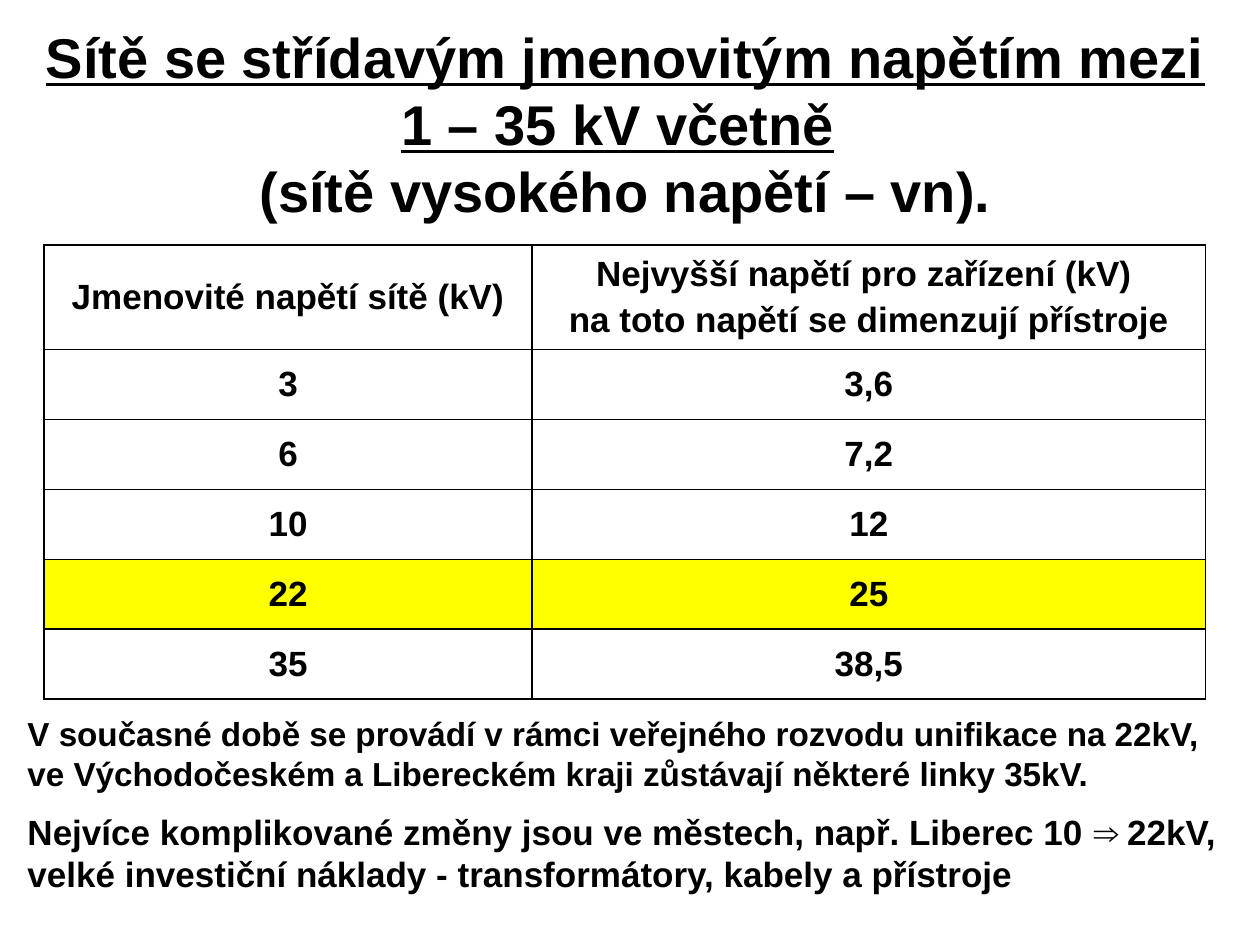
from lxml import etree
from pptx import Presentation
from pptx import util as u
from pptx.dml.color import RGBColor
from pptx.enum import text
from pptx.oxml.ns import qn

COLORS = {"ink": "000000", "paper": "FFFFFF", "highlight": "FFFF00"}
FONT = "Arial"
WIDTH, HEIGHT = u.Inches(10), u.Inches(7.5)

TITLE = [
    [("Sítě se střídavým jmenovitým napětím mezi 1 – 35 kV včetně", True), (" ", False)],
    [("(sítě vysokého napětí – vn).", False)],
]
HEADER = [
    ["Jmenovité napětí sítě (kV)"],
    ["Nejvyšší napětí pro zařízení (kV) ", "na toto napětí se dimenzují přístroje"],
]
VOLTAGES = [("3", "3,6"), ("6", "7,2"), ("10", "12"), ("22", "25"), ("35", "38,5")]
COMMON_VOLTAGE = "22"
NOTES = [
    ("V současné době se provádí v rámci veřejného rozvodu unifikace na 22kV, "
     "ve Východočeském a Libereckém kraji zůstávají některé linky 35kV.", 19),
    ("Nejvíce komplikované změny jsou ve městech, např. Liberec 10 ⇒ 22kV, "
     "velké investiční náklady - transformátory, kabely a přístroje", 20),
]


def share(left, top, width, height):
    """Turn shares of the slide's size into a box of lengths."""
    return (u.Emu(int(left * WIDTH)), u.Emu(int(top * HEIGHT)),
            u.Emu(int(width * WIDTH)), u.Emu(int(height * HEIGHT)))


def add_run(paragraph, words, size, underline=False):
    """Add one bold run to a paragraph."""
    run = paragraph.add_run()
    run.text = words
    run.font.name = FONT
    run.font.size = u.Pt(size)
    run.font.bold = True
    run.font.underline = underline
    run.font.color.rgb = RGBColor.from_string(COLORS["ink"])


def fill_frame(frame, paragraphs, align, gap):
    """Write paragraphs, each a list of run arguments, with a gap between them."""
    frame.word_wrap = True
    for index, runs in enumerate(paragraphs):
        paragraph = frame.add_paragraph() if index else frame.paragraphs[0]
        paragraph.alignment = align
        paragraph.space_before = u.Pt(gap if index else 0)
        for run in runs:
            add_run(paragraph, *run)


def add_title(slide, box):
    """Place the centred title with its underlined first sentence."""
    frame = slide.shapes.add_textbox(*box).text_frame
    paragraphs = [[(words, 32, line) for words, line in runs] for runs in TITLE]
    fill_frame(frame, paragraphs, text.PP_ALIGN.CENTER, 0)


def add_borders(cell):
    """Draw a thin line on all four sides of a cell."""
    properties = cell._tc.get_or_add_tcPr()
    for index, side in enumerate(("lnL", "lnR", "lnT", "lnB")):
        line = etree.Element(qn(f"a:{side}"), w=str(u.Pt(1)))
        fill = etree.SubElement(line, qn("a:solidFill"))
        etree.SubElement(fill, qn("a:srgbClr"), val=COLORS["ink"])
        properties.insert(index, line)


def fill_cell(cell, lines, color):
    """Write centred lines into a filled and bordered cell."""
    cell.vertical_anchor = text.MSO_ANCHOR.MIDDLE
    cell.fill.solid()
    cell.fill.fore_color.rgb = RGBColor.from_string(COLORS[color])
    add_borders(cell)
    fill_frame(cell.text_frame, [[(line, 20)] for line in lines], text.PP_ALIGN.CENTER, 4)


def add_voltage_table(slide, box):
    """Place the table of nominal and highest voltages."""
    rows = [HEADER] + [[[value] for value in pair] for pair in VOLTAGES]
    table = slide.shapes.add_table(len(rows), len(HEADER), *box).table
    for column, part in zip(table.columns, (0.42, 0.58)):
        column.width = u.Emu(int(box[2] * part))
    unit = box[3] / (len(VOLTAGES) + 1.5)
    for index, values in enumerate(rows):
        table.rows[index].height = u.Emu(int(unit if index else unit * 1.5))
        color = "highlight" if values[0] == [COMMON_VOLTAGE] else "paper"
        for cell, lines in zip(table.rows[index].cells, values):
            fill_cell(cell, lines, color)


def add_notes_text(slide, box):
    """Place the two remarks below the table."""
    frame = slide.shapes.add_textbox(*box).text_frame
    fill_frame(frame, [[note] for note in NOTES], text.PP_ALIGN.LEFT, 10)


def main():
    """Build the slide and save it."""
    presentation = Presentation()
    presentation.slide_width, presentation.slide_height = WIDTH, HEIGHT
    slide = presentation.slides.add_slide(presentation.slide_layouts[6])
    add_title(slide, share(0.02, 0.017, 0.953, 0.23))
    add_voltage_table(slide, share(0.035, 0.259, 0.922, 0.481))
    add_notes_text(slide, share(0.012, 0.748, 0.976, 0.21))
    presentation.save("out.pptx")


if __name__ == "__main__":
    main()
